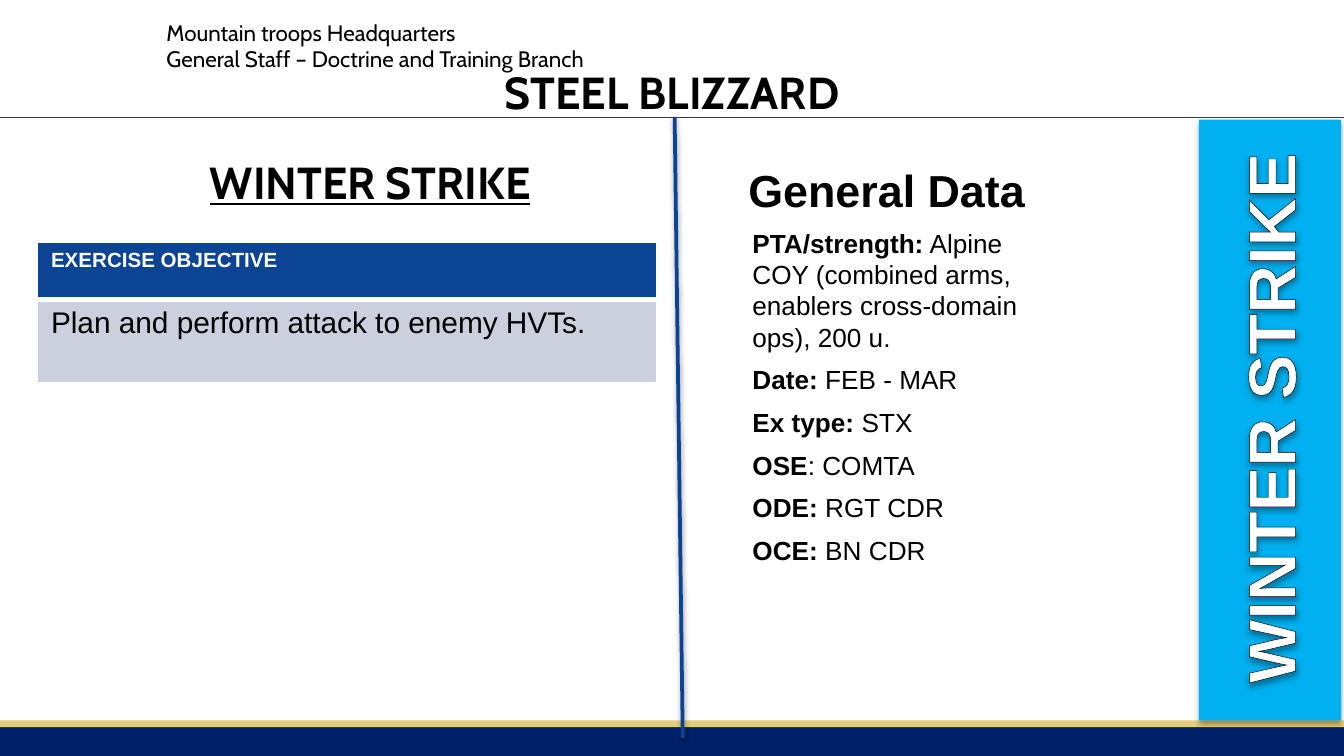
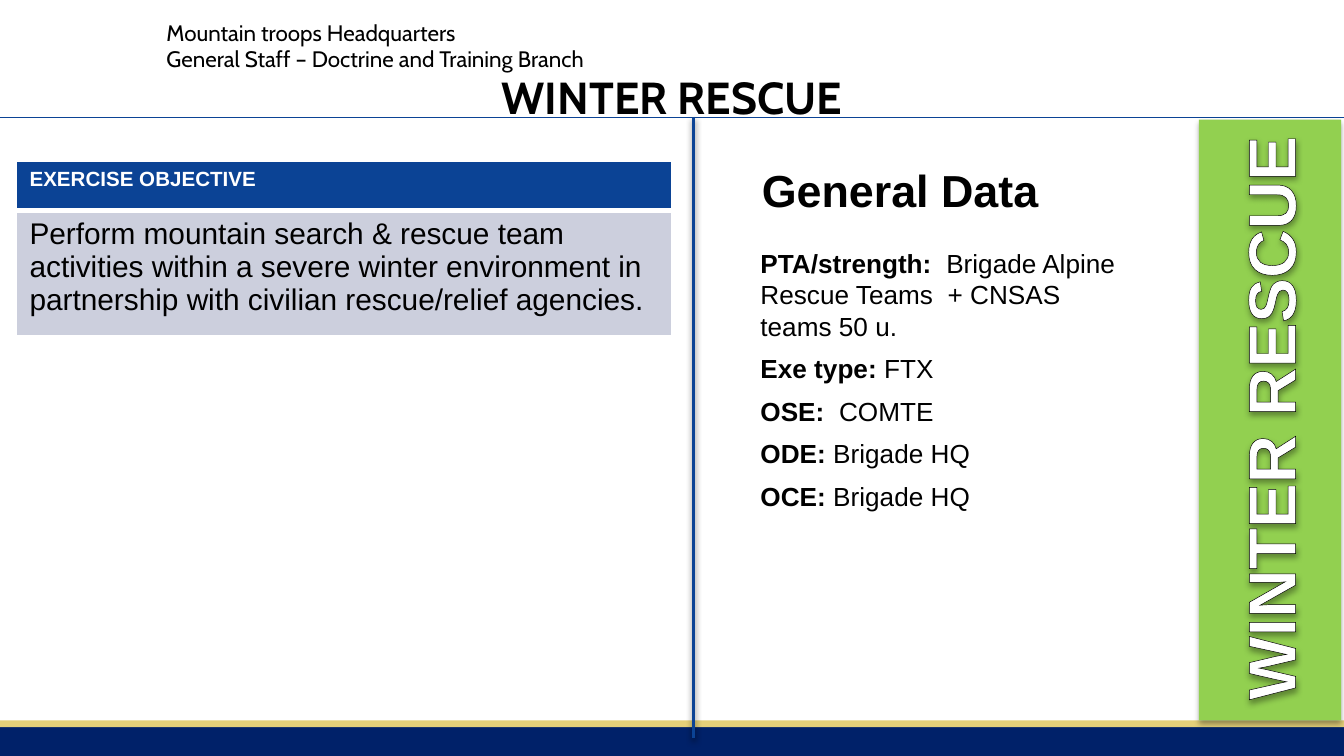
from dataclasses import dataclass

from lxml.etree import SubElement
from pptx import Presentation
from pptx.dml.color import RGBColor
from pptx.enum.shapes import MSO_CONNECTOR, MSO_SHAPE
from pptx.enum.text import MSO_ANCHOR, MSO_AUTO_SIZE, PP_ALIGN
from pptx.oxml import parse_xml
from pptx.oxml.ns import nsdecls, qn
from pptx.util import Emu, Pt

EMU_PER_PX = 9144
TITLE_ONLY = 5


@dataclass(frozen=True)
class Theme:
    """Colours, fonts and type sizes shared by the slides."""

    navy: str = "002169"
    gold: str = "E4D079"
    blue: str = "0B4395"
    grey: str = "CCCFDD"
    white: str = "FFFFFF"
    black: str = "000000"
    heading_font: str = "Cabin"
    body_font: str = "Arial"
    heading: int = 24
    header: int = 12
    label: int = 11
    objective: int = 16
    data: int = 14
    sidebar: int = 36


THEME = Theme()
EXERCISES = [
    {
        "title": "STEEL BLIZZARD",
        "title_top": 41,
        "subtitle": "WINTER STRIKE",
        "sidebar": ("WINTER STRIKE", "00B0F0"),
        "divider": (502, 508),
        "objective": "Plan and perform attack to enemy HVTs.",
        "objective_box": (28, 180, 461),
        "row_heights": (43, 62),
        "data_heading_left": 547,
        "data_box": (550, 164, 249, 296),
        "data": [
            ("PTA/strength:", " Alpine COY (combined arms, enablers cross-domain ops), 200 u."),
            ("Date:", " FEB - MAR"),
            ("Ex type:", " STX"),
            ("OSE", ": COMTA"),
            ("ODE:", " RGT CDR"),
            ("OCE: ", "BN CDR"),
        ],
    },
    {
        "title": "WINTER RESCUE",
        "title_top": 45,
        "subtitle": None,
        "sidebar": ("WINTER RESCUE", "92D050"),
        "divider": (516, 516),
        "objective": "Perform mountain search & rescue team activities within a severe "
        "winter environment in partnership with civilian rescue/relief agencies.",
        "objective_box": (12, 120, 488),
        "row_heights": (37, 93),
        "data_heading_left": 557,
        "data_box": (556, 179, 293, 241),
        "data": [
            ("PTA/strength:  ", "Brigade Alpine Rescue Teams  + CNSAS teams 50 u."),
            ("Exe type: ", "FTX"),
            ("OSE: ", " COMTE"),
            ("ODE: ", "Brigade HQ"),
            ("OCE: ", "Brigade HQ"),
        ],
    },
]


def px(length):
    """Turn px into EMU."""
    return Emu(length * EMU_PER_PX)


def box_px(box):
    """Turn a whole box from px into EMU."""
    return [px(length) for length in box]


def format_font(font, size, color=THEME.black, name=THEME.body_font, bold=False):
    """Set size, colour, typeface and weight of a font."""
    font.size = Pt(size)
    font.color.rgb = RGBColor.from_string(color)
    font.name = name
    font.bold = bold


def format_runs(paragraph, size, **style):
    """Format all the runs of a paragraph alike."""
    for run in paragraph.runs:
        format_font(run.font, size, **style)


def shadow_effect(opacity, distance):
    """Build an effect list with one soft shadow falling downwards."""
    return parse_xml(
        f'<a:effectLst {nsdecls("a")}><a:outerShdw blurRad="{Pt(3.1)}" dist="{Pt(distance)}" '
        f'dir="5400000" rotWithShape="0"><a:srgbClr val="{THEME.black}">'
        f'<a:alpha val="{opacity * 1000}"/></a:srgbClr></a:outerShdw></a:effectLst>'
    )


def add_text_box(shapes, box, text=""):
    """Add a wrapping text box."""
    shape = shapes.add_textbox(*box_px(box))
    shape.text_frame.word_wrap = True
    shape.text_frame.text = text
    return shape


def add_rectangle(shapes, box, color):
    """Add a plain filled rectangle."""
    shape = shapes.add_shape(MSO_SHAPE.RECTANGLE, *box_px(box))
    shape.shadow.inherit = False
    shape.fill.solid()
    shape.fill.fore_color.rgb = RGBColor.from_string(color)
    shape.line.fill.background()
    return shape


def add_line(slide, start, end, width, shadowed=False):
    """Add a straight blue line."""
    connector = slide.shapes.add_connector(
        MSO_CONNECTOR.STRAIGHT, *box_px(start), *box_px(end)
    )
    connector.line.color.rgb = RGBColor.from_string(THEME.blue)
    connector.line.width = Pt(width)
    properties = connector.element.spPr
    if shadowed:
        properties.append(shadow_effect(38, 1.6))
    else:
        SubElement(properties, qn("a:effectLst"))


def add_frame(slide):
    """Add the footer bands, the header text and the header line."""
    add_rectangle(slide.shapes, (-1, 537, 1002, 27), THEME.navy)
    add_rectangle(slide.shapes, (-1, 536, 1002, 5), THEME.gold)
    header = add_text_box(
        slide.shapes,
        (114, 9, 459, 79),
        "Mountain troops Headquarters\vGeneral Staff – Doctrine and Training Branch",
    )
    format_runs(header.text_frame.paragraphs[0], THEME.header, name=THEME.heading_font)
    add_line(slide, (0, 87), (1000, 87), 0.25)


def format_heading(shape, underline=False):
    """Centre a heading and set it in the heading style."""
    frame = shape.text_frame
    frame.word_wrap = True
    frame.auto_size = MSO_AUTO_SIZE.NONE
    frame.vertical_anchor = MSO_ANCHOR.TOP
    frame.margin_left = frame.margin_right = px(13)
    frame.margin_top = frame.margin_bottom = px(7)
    paragraph = frame.paragraphs[0]
    paragraph.alignment = PP_ALIGN.CENTER
    format_runs(paragraph, THEME.heading, name=THEME.heading_font, bold=True)
    if underline:
        paragraph.runs[0].font.underline = True


def set_title(slide, text, top):
    """Place and fill the title placeholder."""
    title = slide.shapes.title
    title.left, title.top, title.width, title.height = box_px((126, top, 748, 53))
    title.text_frame.text = text
    format_heading(title)


def set_borders(cell, top, bottom):
    """Give a cell white borders, with its own widths above and below."""
    properties = cell._tc.get_or_add_tcPr()
    edges = {"lnL": 1, "lnR": 1, "lnT": top, "lnB": bottom}
    for position, (edge, width) in enumerate(edges.items()):
        border = parse_xml(
            f'<a:{edge} {nsdecls("a")} w="{Pt(width)}"><a:solidFill>'
            f'<a:srgbClr val="{THEME.white}"/></a:solidFill></a:{edge}>'
        )
        properties.insert(position, border)


def add_objective_table(slide, objective, box, row_heights):
    """Add the table with the exercise objective."""
    frame = slide.shapes.add_table(2, 1, *box_px((*box, sum(row_heights))))
    rows = [
        ("EXERCISE OBJECTIVE", THEME.label, THEME.white, True, THEME.blue, (1, 3)),
        (objective, THEME.objective, THEME.black, False, THEME.grey, (3, 1)),
    ]
    for index, (text, size, color, bold, fill, borders) in enumerate(rows):
        frame.table.rows[index].height = px(row_heights[index])
        cell = frame.table.cell(index, 0)
        cell.text_frame.text = text
        format_runs(cell.text_frame.paragraphs[0], size, color=color, bold=bold)
        cell.fill.solid()
        cell.fill.fore_color.rgb = RGBColor.from_string(fill)
        set_borders(cell, *borders)


def add_general_data(slide, heading_left, box, entries):
    """Add the general data heading and its list of labelled entries."""
    heading = add_text_box(slide.shapes, (heading_left, 116, 252, 50), "General Data")
    format_runs(heading.text_frame.paragraphs[0], THEME.heading, bold=True)
    frame = add_text_box(slide.shapes, box).text_frame
    frame.auto_size = MSO_AUTO_SIZE.SHAPE_TO_FIT_TEXT
    for index, (label, value) in enumerate(entries):
        paragraph = frame.add_paragraph() if index else frame.paragraphs[0]
        paragraph.space_after = Pt(6)
        for text, bold in ((label, True), (value, False)):
            run = paragraph.add_run()
            run.text = text
            format_font(run.font, THEME.data, bold=bold)


def add_sidebar(slide, text, color):
    """Add the coloured sidebar with its upward outlined name."""
    group = slide.shapes.add_group_shape()
    panel = add_rectangle(group.shapes, (892, 89, 106, 447), color)
    properties = panel.element.spPr
    properties.replace(properties.find(qn("a:effectLst")), shadow_effect(35, 1.8))
    name = add_text_box(group.shapes, (720, 291, 448, 40), text)
    name.element.spPr.append(shadow_effect(35, 1.8))
    name.rotation = 270
    name.text_frame.vertical_anchor = MSO_ANCHOR.MIDDLE
    paragraph = name.text_frame.paragraphs[0]
    paragraph.alignment = PP_ALIGN.CENTER
    format_runs(paragraph, THEME.sidebar, color=THEME.white, bold=True)
    outline = parse_xml(
        f'<a:ln {nsdecls("a")} w="{Pt(0.75)}"><a:solidFill>'
        f'<a:srgbClr val="{THEME.black}"/></a:solidFill></a:ln>'
    )
    paragraph.runs[0]._r.get_or_add_rPr().insert(0, outline)


def add_exercise_slide(presentation, exercise):
    """Add one exercise slide."""
    slide = presentation.slides.add_slide(presentation.slide_layouts[TITLE_ONLY])
    add_frame(slide)
    set_title(slide, exercise["title"], exercise["title_top"])
    divider_top, divider_bottom = exercise["divider"]
    add_line(slide, (divider_top, 87), (divider_bottom, 549), 2, shadowed=True)
    add_objective_table(
        slide, exercise["objective"], exercise["objective_box"], exercise["row_heights"]
    )
    add_general_data(
        slide, exercise["data_heading_left"], exercise["data_box"], exercise["data"]
    )
    if exercise["subtitle"]:
        subtitle = add_text_box(slide.shapes, (20, 108, 511, 53), exercise["subtitle"])
        format_heading(subtitle, underline=True)
    add_sidebar(slide, *exercise["sidebar"])


def main():
    """Build and save the presentation."""
    presentation = Presentation()
    presentation.slide_width = px(1000)
    presentation.slide_height = px(1000) * 9 // 16
    for exercise in EXERCISES:
        add_exercise_slide(presentation, exercise)
    presentation.save("out.pptx")


if __name__ == "__main__":
    main()
